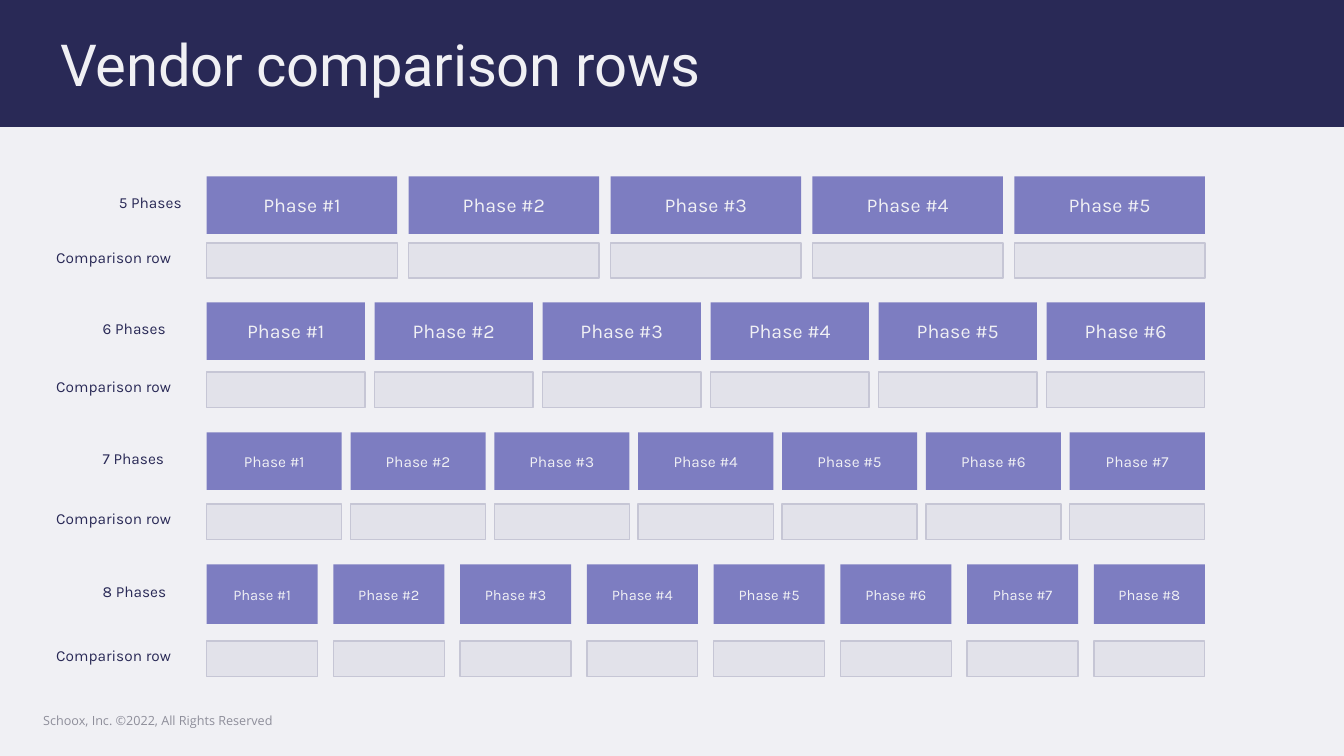
import pptx
import pptx.util
import pptx.dml.color
import pptx.enum.shapes
import pptx.enum.text

INCH = pptx.util.Inches
ALIGN = pptx.enum.text.PP_ALIGN
MIDDLE = pptx.enum.text.MSO_ANCHOR.MIDDLE
RECTANGLE = pptx.enum.shapes.MSO_SHAPE.RECTANGLE

WIDTH, HEIGHT = 13.33, 7.5
COLOURS = {
    "page": "F0F0F4",
    "navy": "292956",
    "phase": "7D7DC1",
    "cell": "E2E2EA",
    "border": "C6C6D5",
    "footer": "8E8E9A",
}
FONTS = {
    "title": {"name": "Roboto", "size": 41.4, "color": "page"},
    "label": {"name": "Karla", "size": 11, "color": "navy"},
    "phase": {"name": "Karla", "size": 14, "color": "page"},
    "footer": {"name": "Open Sans", "size": 9, "color": "footer"},
}

GRID_LEFT, GRID_WIDTH = 2.05, 9.9
CAPTION_LEFT = 0.46
LABEL_HEIGHT, LABEL_LIFT = 0.29, 0.03
CELL_HEIGHT = 0.35

# Phase count, phase width, phase top, phase height, comparison top,
# label left, phase text size
BLOCKS = [
    (5, 1.89, 1.75, 0.57, 2.41, 1.08, 14),
    (6, 1.57, 3.00, 0.57, 3.69, 0.92, 14),
    (7, 1.34, 4.29, 0.57, 5.00, 0.92, 11),
    (8, 1.10, 5.60, 0.59, 6.36, 0.92, 10.5),
]


def colour(name):
    return pptx.dml.color.RGBColor.from_string(COLOURS[name])


def write(shape, text, style, align=ALIGN.LEFT, **changes):
    """Set one line of vertically centred text in the given font style."""
    frame = shape.text_frame
    frame.word_wrap = True
    frame.vertical_anchor = MIDDLE
    para = frame.paragraphs[0]
    para.alignment = align
    span = para.add_run()
    span.text = text
    values = {**FONTS[style], **changes}
    span.font.color.rgb = colour(values.pop("color"))
    values["size"] = pptx.util.Pt(values["size"])
    for key, value in values.items():
        setattr(span.font, key, value)
    return span


def add_text(page, box, text, style):
    write(page.shapes.add_textbox(*map(INCH, box)), text, style)


def add_box(page, box, fill, border=None):
    shape = page.shapes.add_shape(RECTANGLE, *map(INCH, box))
    shape.shadow.inherit = False
    shape.fill.solid()
    shape.fill.fore_color.rgb = colour(fill)
    if border:
        shape.line.color.rgb = colour(border)
        shape.line.width = pptx.util.Pt(1)
    else:
        shape.line.fill.background()
    return shape


def add_header(page, box, text):
    left, top, width, height = box
    band = add_box(page, box, "navy")
    page.shapes._spTree.insert(2, band._element)  # behind the title
    title = page.shapes.title
    place = {"left": left + 0.5, "top": top + height / 6,
             "width": width - 2.37, "height": height * 0.66}
    for key, value in place.items():
        setattr(title, key, INCH(value))
    span = write(title, text, "title")
    span.font._element.set("spc", "-20")


def add_label(page, left, width, middle, text):
    top = middle - LABEL_HEIGHT / 2 - LABEL_LIFT
    add_text(page, (left, top, width, LABEL_HEIGHT), text, "label")


def add_block(page, count, width, top, height, cell_top, label_left, size):
    """Draw a row of phases and the comparison row below it."""
    add_label(page, label_left, 0.97, top + height / 2, f"{count} Phases")
    add_label(page, CAPTION_LEFT, 1.57, cell_top + CELL_HEIGHT / 2,
              "Comparison row")
    pitch = (GRID_WIDTH - width) / (count - 1)
    for column in range(count):
        left = GRID_LEFT + column * pitch
        phase = add_box(page, (left, top, width, height), "phase")
        write(phase, f"Phase #{column + 1}", "phase", ALIGN.CENTER, size=size)
        add_box(page, (left, cell_top, width, CELL_HEIGHT), "cell", "border")


def main():
    deck = pptx.Presentation()
    deck.slide_width, deck.slide_height = INCH(WIDTH), INCH(HEIGHT)
    page = deck.slides.add_slide(deck.slide_layouts.get_by_name("Title Only"))
    page.background.fill.solid()
    page.background.fill.fore_color.rgb = colour("page")
    add_header(page, (0, 0, WIDTH, 1.26), "Vendor comparison rows")
    for block in BLOCKS:
        add_block(page, *block)
    add_text(page, (0.33, 6.95, 3, 0.4),
             "Schoox, Inc. ©2022, All Rights Reserved", "footer")
    deck.save("out.pptx")


if __name__ == "__main__":
    main()
